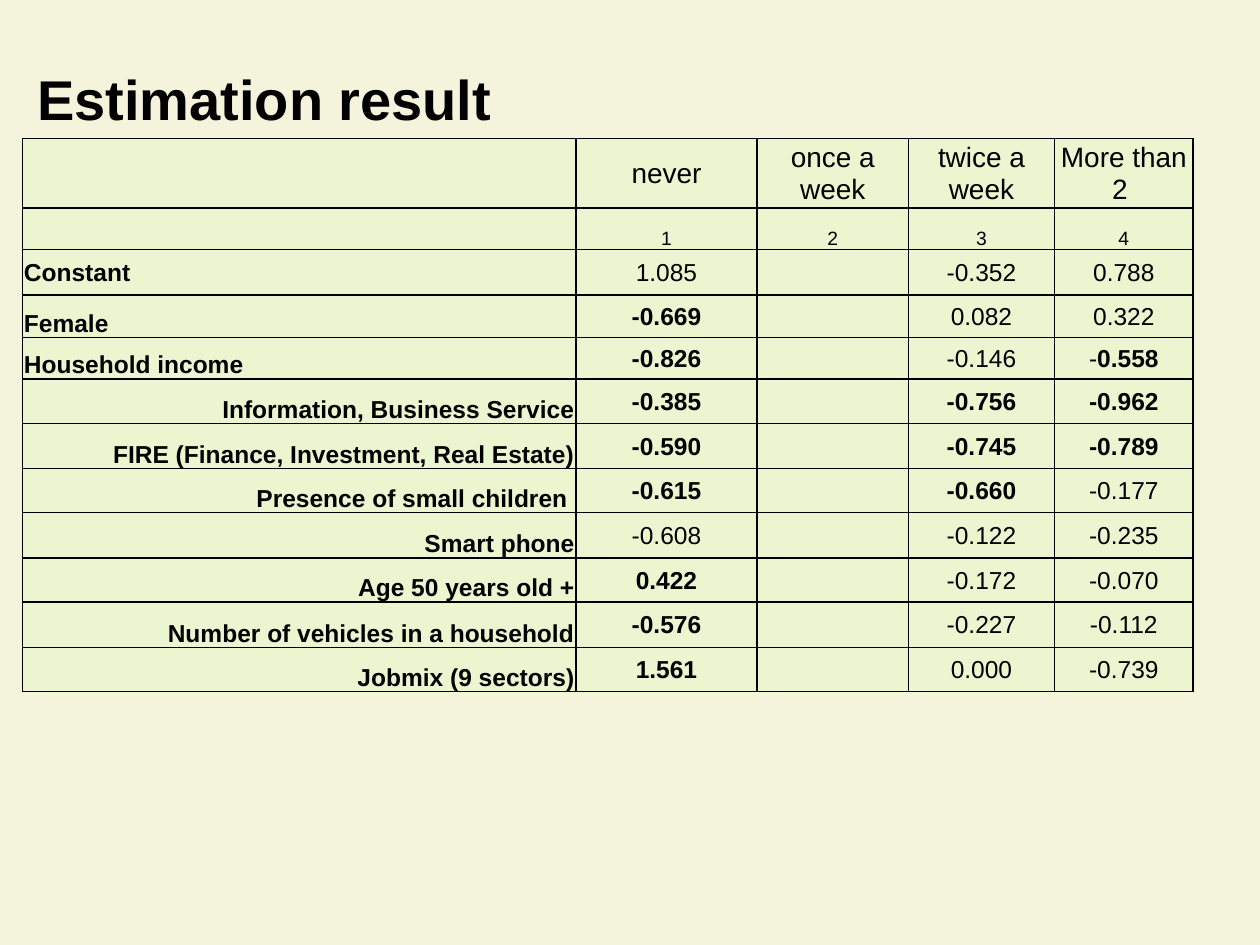
from lxml import etree
from pptx import Presentation
from pptx.dml.color import RGBColor
from pptx.enum.text import MSO_ANCHOR, MSO_AUTO_SIZE, PP_ALIGN
from pptx.oxml.ns import qn
from pptx.util import Inches, Pt

BLACK = RGBColor(0x00, 0x00, 0x00)
CREAM = RGBColor(0xF3, 0xF4, 0xDB)
LIME = RGBColor(0xCC, 0xFF, 0x99)
LEFT, CENTER, RIGHT = PP_ALIGN.LEFT, PP_ALIGN.CENTER, PP_ALIGN.RIGHT
MIDDLE, BOTTOM = MSO_ANCHOR.MIDDLE, MSO_ANCHOR.BOTTOM
FIT = MSO_AUTO_SIZE.SHAPE_TO_FIT_TEXT

WIDTHS = [4.39, 1.44, 1.2, 1.16, 1.1]
HEIGHTS = [0.55, 0.33, 0.36, 0.34, 0.33] + [0.35, 0.36] * 3 + [0.35]

# Text after an asterisk is bold.
ROWS = [
    ["", "never", "once a week", "twice a week", "More than 2 "],
    ["", "1", "2", "3", "4"],
    ["*Constant", "1.085", "", "-0.352", "0.788"],
    ["*Female", "*-0.669", "", "0.082", "0.322"],
    ["*Household income", "*-0.826", "", "-0.146", "-*0.558"],
    ["*Information, Business Service", "*-0.385", "", "*-0.756", "*-0.962"],
    ["*FIRE (Finance, Investment, Real Estate)", "*-0.590", "", "*-0.745", "*-0.789"],
    ["*Presence of small children ", "*-0.615", "", "*-0.660", "-0.177"],
    ["*Smart phone", "-0.608", "", "-0.122", "-0.235"],
    ["*Age 50 years old +", "*0.422", "", "-0.172", "-0.070"],
    ["*Number of vehicles in a household", "*-0.576", "", "-0.227", "-0.112"],
    ["*Jobmix (9 sectors)", "*1.561", "", "0.000", "-0.739"],
]


def style(font, size):
    font.name = "Arial"
    font.size = Pt(size)
    font.color.rgb = BLACK


def paint(cell):
    props = cell._tc.get_or_add_tcPr()
    for side in ("a:lnL", "a:lnR", "a:lnT", "a:lnB"):
        line = etree.SubElement(props, qn(side), w=str(Pt(1)))
        solid = etree.SubElement(line, qn("a:solidFill"))
        etree.SubElement(solid, qn("a:srgbClr"), val=str(BLACK))
    cell.fill.solid()
    cell.fill.fore_color.rgb = LIME
    color = props.find(qn("a:solidFill")).find(qn("a:srgbClr"))
    etree.SubElement(color, qn("a:alpha"), val="18000")


deck = Presentation()
deck.slide_width, deck.slide_height = Inches(10), Inches(7.5)
slide = deck.slides.add_slide(deck.slide_layouts[6])
slide.background.fill.solid()
slide.background.fill.fore_color.rgb = CREAM

title = slide.shapes.add_textbox(Inches(0.18), Inches(0.46), Inches(3.84), Inches(0.64))
frame = title.text_frame
frame.word_wrap = False
frame.auto_size = FIT
para = frame.paragraphs[0]
para.text = "Estimation result"
para.alignment = CENTER
style(para.font, 32)
para.font.bold = True

table = slide.shapes.add_table(
    len(ROWS), len(WIDTHS), Inches(0.18), Inches(1.1),
    Inches(sum(WIDTHS)), Inches(sum(HEIGHTS)),
).table
table.first_row = table.horz_banding = False
for column, width in zip(table.columns, WIDTHS):
    column.width = Inches(width)

for r, (texts, height) in enumerate(zip(ROWS, HEIGHTS)):
    table.rows[r].height = Inches(height)
    size = {0: 16, 1: 11}.get(r, 14)
    for c, text in enumerate(texts):
        cell = table.cell(r, c)
        paint(cell)
        cell.margin_left = cell.margin_right = cell.margin_top = Inches(0.01)
        cell.margin_bottom = 0
        low = r == 1 or (c == 0 and r > 2)
        cell.vertical_anchor = BOTTOM if low else MIDDLE
        para = cell.text_frame.paragraphs[0]
        if c:
            para.alignment = CENTER
        else:
            para.alignment = RIGHT if r > 4 else LEFT
        style(para.font, size)
        plain, mark, strong = text.partition("*")
        for part, bold in ((plain, False), (strong, True)):
            if part:
                run = para.add_run()
                run.text = part
                run.font.bold = bold

deck.save("out.pptx")
